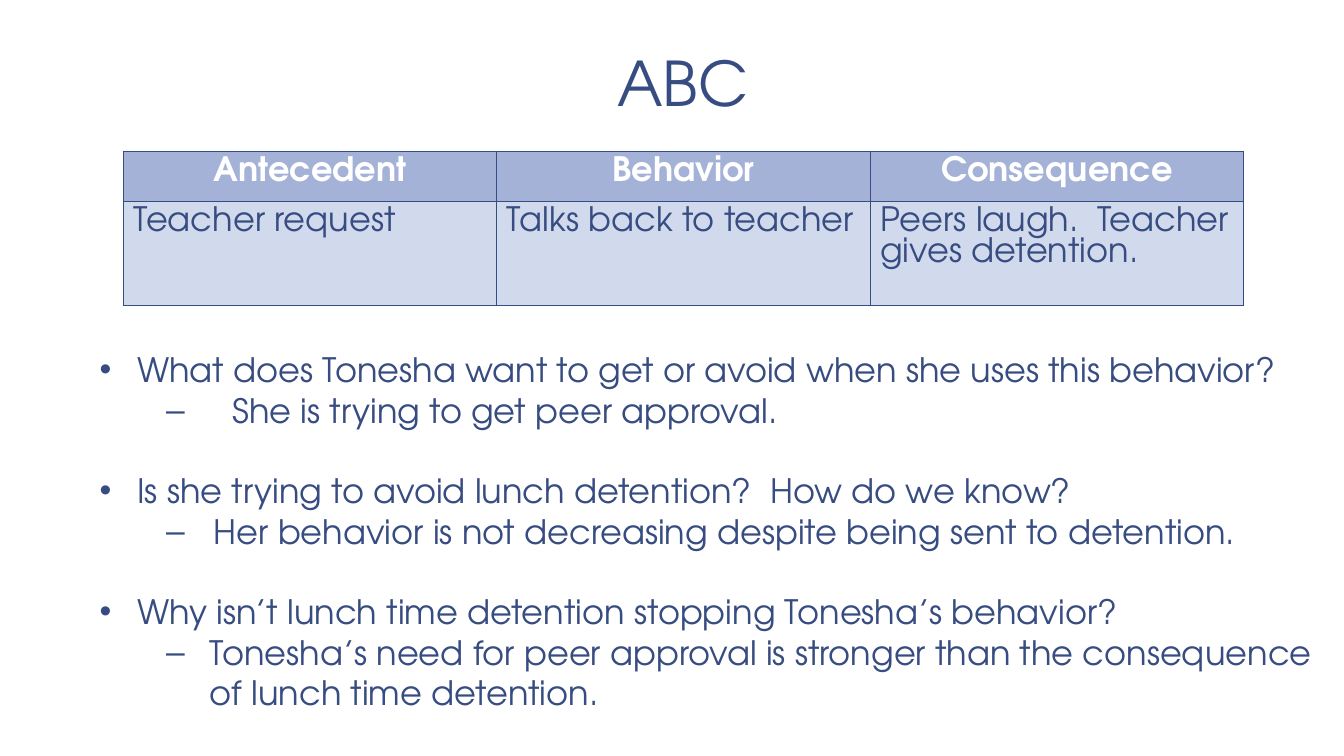
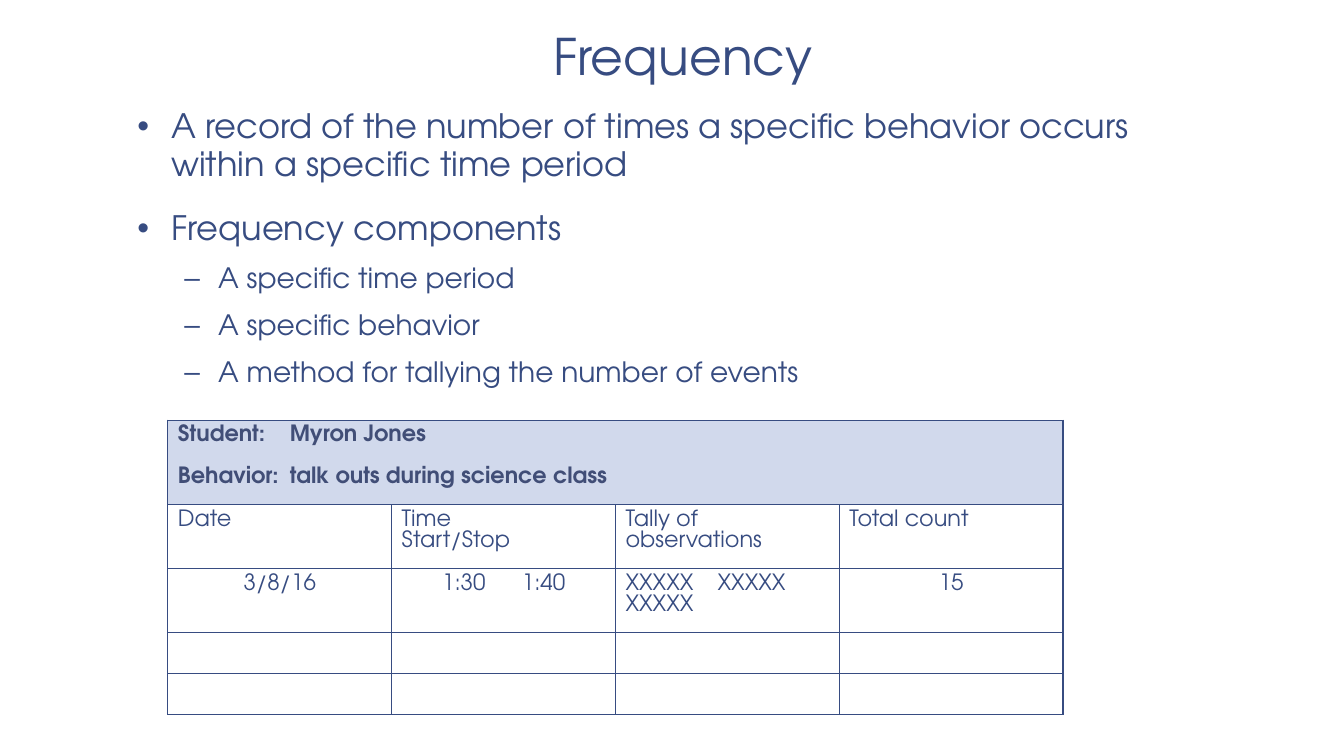
from dataclasses import dataclass

from lxml import etree
from pptx import Presentation
from pptx.dml.color import RGBColor
from pptx.enum.shapes import MSO_SHAPE
from pptx.enum.text import MSO_ANCHOR, PP_ALIGN
from pptx.oxml.ns import qn
from pptx.util import Cm, Pt

CENTER = PP_ALIGN.CENTER
LEFT = PP_ALIGN.LEFT
TOP = MSO_ANCHOR.TOP
BOTTOM = MSO_ANCHOR.BOTTOM
RECTANGLE = MSO_SHAPE.RECTANGLE


@dataclass(frozen=True)
class Theme:
    font: str = "TeX Gyre Adventor"
    navy: str = "374C81"
    slate: str = "414E77"
    white: str = "FFFFFF"
    header_fill: str = "A4B2D8"
    cell_fill: str = "D1D9EC"
    title_size: int = 44
    small_title_size: int = 36
    body_size: int = 24
    detail_size: int = 20
    form_size: int = 16
    title_spacing: float = 0.85
    body_spacing: float = 0.95
    border_width: float = 1


THEME = Theme()


@dataclass
class Line:
    """One paragraph; indent, hanging and tabs are in centimetres, space in points."""
    text: str
    size: float = THEME.body_size
    color: str = THEME.navy
    bold: bool = False
    align: PP_ALIGN = LEFT
    spacing: float = 1.0
    space: float = 0
    bullet: str = ""
    indent: float = 0
    hanging: float = 0
    tabs: tuple = ()


def apply_format(target, values):
    for name, value in values.items():
        setattr(target, name, value)


def set_fill(fill, color):
    fill.solid()
    fill.fore_color.rgb = RGBColor.from_string(color)


def add_bullet(paragraph, line):
    properties = paragraph._p.get_or_add_pPr()
    properties.set("marL", str(Cm(line.indent)))
    properties.set("indent", str(-Cm(line.hanging)))
    etree.SubElement(properties, qn("a:buFont"), typeface="Arial")
    etree.SubElement(properties, qn("a:buChar"), char=line.bullet)


def add_tabs(paragraph, positions):
    tab_list = etree.SubElement(paragraph._p.get_or_add_pPr(), qn("a:tabLst"))
    for position in positions:
        etree.SubElement(tab_list, qn("a:tab"), pos=str(Cm(position)), algn="l")


def write_lines(text_frame, lines):
    for index, line in enumerate(lines):
        paragraph = text_frame.add_paragraph() if index else text_frame.paragraphs[0]
        if line.bullet:
            add_bullet(paragraph, line)
        if line.tabs:
            add_tabs(paragraph, line.tabs)
        apply_format(paragraph, {
            "alignment": line.align,
            "line_spacing": line.spacing,
            "space_before": Pt(line.space if index else 0),
        })
        run = paragraph.add_run()
        run.text = line.text
        apply_format(run.font, {
            "name": THEME.font, "size": Pt(line.size), "bold": line.bold,
        })
        run.font.color.rgb = RGBColor.from_string(line.color)


def add_panel(slide):
    panel = slide.shapes.add_shape(RECTANGLE, Cm(0.84), 0, Cm(32.16), Cm(19.05))
    panel.shadow.inherit = False
    panel.line.fill.background()
    set_fill(panel.fill, THEME.white)


def add_text(slide, box, lines, anchor=TOP, margins=(0.33, 0.18)):
    shape = slide.shapes.add_textbox(*(Cm(length) for length in box))
    side, edge = (Cm(margin) for margin in margins)
    apply_format(shape.text_frame, {
        "word_wrap": True, "vertical_anchor": anchor,
        "margin_left": side, "margin_right": side,
        "margin_top": edge, "margin_bottom": edge,
    })
    write_lines(shape.text_frame, lines)


def add_title(slide, text, height, size):
    title = Line(text, size=size, align=CENTER, spacing=THEME.title_spacing)
    add_text(slide, (3.1, 0.2, 28.22, height), [title], BOTTOM)


def add_borders(cell):
    properties = cell._tc.get_or_add_tcPr()
    for index, side in enumerate(("lnL", "lnR", "lnT", "lnB")):
        border = etree.Element(qn(f"a:{side}"), w=str(Pt(THEME.border_width)))
        fill = etree.SubElement(border, qn("a:solidFill"))
        etree.SubElement(fill, qn("a:srgbClr"), val=THEME.navy)
        properties.insert(index, border)


def add_grid(slide, left, top, column_width, row_heights, rows, fills):
    """Draw a table of cells, each a list of lines, with one fill (or None) per row."""
    columns = len(rows[-1])
    table = slide.shapes.add_table(
        len(rows), columns, Cm(left), Cm(top),
        Cm(column_width * columns), Cm(sum(row_heights))).table
    apply_format(table, {"first_row": False, "horz_banding": False})
    for column in table.columns:
        column.width = Cm(column_width)
    for row_index, (cells, height, fill) in enumerate(zip(rows, row_heights, fills)):
        table.rows[row_index].height = Cm(height)
        for column_index in range(columns):
            cell = table.cell(row_index, column_index)
            if fill:
                set_fill(cell.fill, fill)
            else:
                cell.fill.background()
            add_borders(cell)
        for column_index, lines in enumerate(cells):
            write_lines(table.cell(row_index, column_index).text_frame, lines)
        if len(cells) == 1:
            table.cell(row_index, 0).merge(table.cell(row_index, columns - 1))


def form_line(text, **values):
    return Line(text, size=THEME.form_size, **values)


def form_heading(text, **values):
    return form_line(text, color=THEME.slate, bold=True, tabs=(2.82,), **values)


def question(text):
    return Line(text, bullet="•", indent=0.95, hanging=0.95, space=28.8)


def answer(text, indent):
    return Line(text, bullet="–", indent=indent, hanging=indent - 1.68)


def topic(text):
    return Line(text, bullet="•", indent=0.86, hanging=0.86, space=18.2,
                spacing=THEME.body_spacing)


def component(text):
    return Line(text, size=THEME.detail_size, bullet="–", indent=2.04,
                hanging=0.85, space=10.7, spacing=THEME.body_spacing)


def build_abc(slide):
    add_title(slide, "ABC", 2.97, THEME.title_size)
    headings = ("Antecedent", "Behavior", "Consequence")
    events = ("Teacher request", "Talks back to teacher",
              "Peers laugh.  Teacher gives detention.")
    add_grid(
        slide, 3.11, 3.81, 9.41, (1.04, 2.62),
        [[[Line(text, color=THEME.white, bold=True, align=CENTER)]
          for text in headings],
         [[Line(text)] for text in events]],
        (THEME.header_fill, THEME.cell_fill))
    add_text(slide, (2.26, 8.67, 31.5, 9.5), [
        question("What does Tonesha want to get or avoid when she uses this behavior?"),
        answer("She is trying to get peer approval.", 3.35),
        question("Is she trying to avoid lunch detention?  How do we know?"),
        answer("Her behavior is not decreasing despite being sent to detention.", 2.88),
        question("Why isn’t lunch time detention stopping Tonesha’s behavior?"),
        answer("Tonesha’s need for peer approval is stronger than the consequence "
               "of lunch time detention.", 2.78),
    ], margins=(0.25, 0.13))


def build_frequency(slide):
    add_title(slide, "Frequency", 2.13, THEME.small_title_size)
    add_text(slide, (3.13, 2.54, 27.9, 7.8), [
        topic("A record of the number of times a specific behavior occurs "
              "within a specific time period"),
        topic("Frequency components"),
        component("A specific time period"),
        component("A specific behavior"),
        component("A method for tallying the number of events"),
    ])
    empty_row = [[]] * 4
    add_grid(
        slide, 4.23, 10.59, 5.64, (1.82, 1.3, 1.3, 1.03, 1.03),
        [[[form_heading("Student:\tMyron Jones"),
           form_heading("Behavior:\ttalk outs during science class", space=14.8)]],
         [[form_line("Date")],
          [form_line("Time"), form_line("Start/Stop")],
          [form_line("Tally of observations")],
          [form_line("Total count")]],
         [[form_line("3/8/16", align=CENTER)],
          [form_line("\t1:30\t1:40", tabs=(1.02, 3.03))],
          [form_line("XXXXX\tXXXXX", tabs=(2.32,)), form_line("XXXXX")],
          [form_line("15", align=CENTER)]],
         empty_row, empty_row],
        (THEME.cell_fill, None, None, None, None))


def main():
    presentation = Presentation()
    apply_format(presentation, {"slide_width": Cm(33.87), "slide_height": Cm(19.05)})
    blank_layout = presentation.slide_layouts[6]
    for build in (build_abc, build_frequency):
        slide = presentation.slides.add_slide(blank_layout)
        add_panel(slide)
        build(slide)
    presentation.save("out.pptx")


if __name__ == "__main__":
    main()
